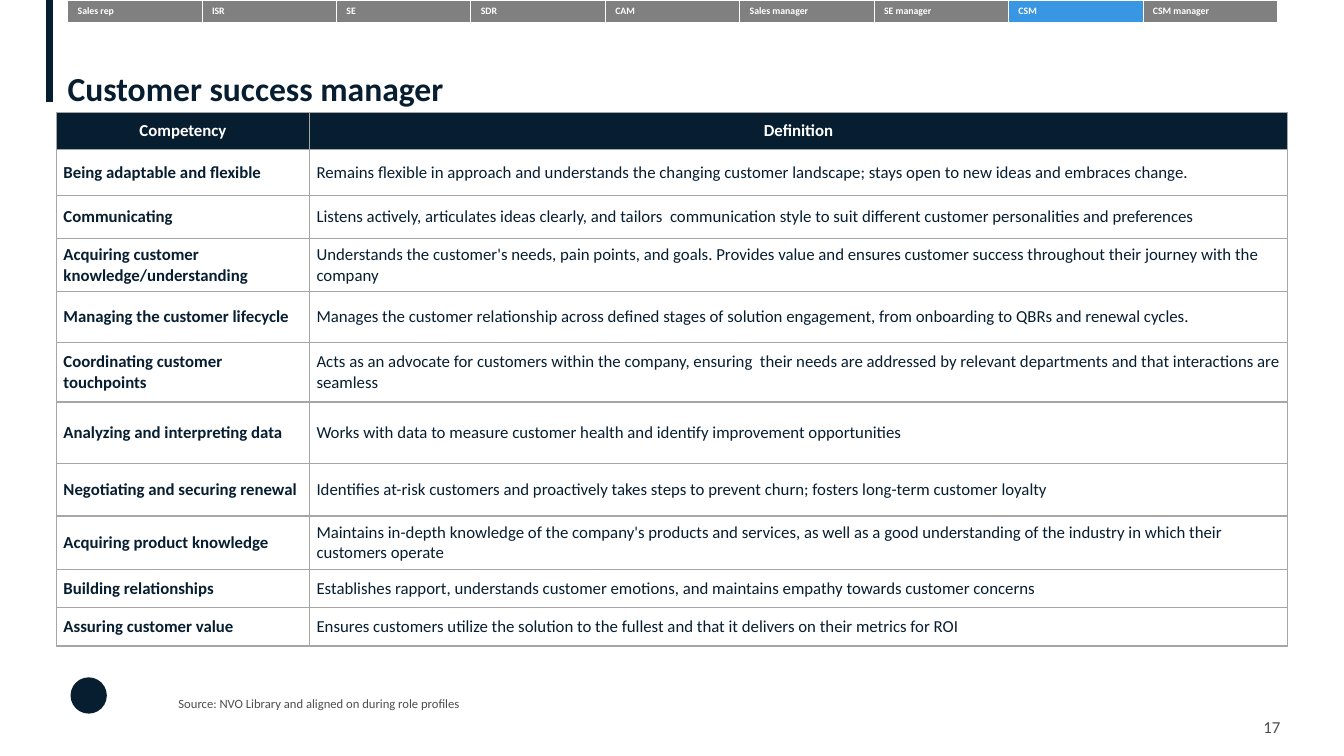
"""Build the customer success manager competency slide."""
from lxml import etree
from pptx import Presentation
from pptx.dml.color import RGBColor
from pptx.enum.shapes import MSO_CONNECTOR, MSO_SHAPE
from pptx.enum.text import MSO_ANCHOR, MSO_AUTO_SIZE, PP_ALIGN
from pptx.oxml.ns import qn
from pptx.util import Inches, Pt

LEFT, CENTER = PP_ALIGN.LEFT, PP_ALIGN.CENTER
TOP, MIDDLE, BOTTOM = MSO_ANCHOR.TOP, MSO_ANCHOR.MIDDLE, MSO_ANCHOR.BOTTOM
STRAIGHT, OVAL = MSO_CONNECTOR.STRAIGHT, MSO_SHAPE.OVAL
NO_FIT = MSO_AUTO_SIZE.NONE

NAVY = RGBColor(0x07, 0x1E, 0x31)
BLUE = RGBColor(0x38, 0x96, 0xE3)
GRAY = RGBColor(0x80, 0x80, 0x80)
RULE = RGBColor(0xA6, 0xA6, 0xA6)
DARK = RGBColor(0x4D, 0x4D, 0x4D)
WHITE = RGBColor(0xFF, 0xFF, 0xFF)

TABS = ["Sales rep", "ISR", "SE", "SDR", "CAM", "Sales manager",
        "SE manager", "CSM", "CSM manager"]
ACTIVE = "CSM"
HEADS = ("Competency", "Definition")
SKILLS = [
    (0.46, "Being adaptable and flexible",
     "Remains flexible in approach and understands the changing customer "
     "landscape; stays open to new ideas and embraces change."),
    (0.43, "Communicating",
     "Listens actively, articulates ideas clearly, and tailors  communication "
     "style to suit different customer personalities and preferences"),
    (0.52, "Acquiring customer knowledge/understanding",
     "Understands the customer's needs, pain points, and goals. Provides value "
     "and ensures customer success throughout their journey with the company"),
    (0.51, "Managing the customer lifecycle",
     "Manages the customer relationship across defined stages of solution "
     "engagement, from onboarding to QBRs and renewal cycles."),
    (0.59, "Coordinating customer touchpoints",
     "Acts as an advocate for customers within the company, ensuring  their "
     "needs are addressed by relevant departments and that interactions are "
     "seamless"),
    (0.61, "Analyzing and interpreting data",
     "Works with data to measure customer health and identify improvement "
     "opportunities"),
    (0.52, "Negotiating and securing renewal",
     "Identifies at-risk customers and proactively takes steps to prevent "
     "churn; fosters long-term customer loyalty"),
    (0.53, "Acquiring product knowledge",
     "Maintains in-depth knowledge of the company's products and services, as "
     "well as a good understanding of the industry in which their "
     "customers operate"),
    (0.38, "Building relationships",
     "Establishes rapport, understands customer emotions, and maintains "
     "empathy towards customer concerns"),
    (0.38, "Assuring customer value",
     "Ensures customers utilize the solution to the fullest and that it "
     "delivers on their metrics for ROI"),
]


def write(frame, text, size=12, color=NAVY, bold=False, align=LEFT, space=1.0):
    """Put formatted text in the first paragraph of a frame."""
    para = frame.paragraphs[0]
    para.text = text
    para.alignment = align
    para.line_spacing = space
    font = para.font
    font.name, font.size, font.bold = "Calibri", Pt(size), bold
    font.color.rgb = color


class Page:
    """Hold the style and the current slide."""

    def __init__(self, deck):
        """Add a title-only slide to the deck."""
        self.slide = deck.slides.add_slide(deck.slide_layouts[5])
        self.shapes = self.slide.shapes

    def frame(self, shape, anchor):
        """Strip the margins of a text shape and anchor its text."""
        frame = shape.text_frame
        frame.margin_left = frame.margin_right = 0
        frame.margin_top = frame.margin_bottom = 0
        frame.auto_size = NO_FIT
        frame.word_wrap = True
        frame.vertical_anchor = anchor
        return frame

    def title(self, text, x, y, w, h):
        """Place and fill the title."""
        shape = self.shapes.title
        shape.left, shape.top = Inches(x), Inches(y)
        shape.width, shape.height = Inches(w), Inches(h)
        write(self.frame(shape, BOTTOM), text, size=24, bold=True, space=0.9)

    def label(self, text, x, y, w, h, anchor=TOP, **style):
        """Add a text box."""
        box = self.shapes.add_textbox(Inches(x), Inches(y), Inches(w), Inches(h))
        write(self.frame(box, anchor), text, **style)

    def line(self, x1, y1, x2, y2, color, width):
        """Add a straight line."""
        line = self.shapes.add_connector(
            STRAIGHT, Inches(x1), Inches(y1), Inches(x2), Inches(y2))
        line.line.color.rgb = color
        line.line.width = Pt(width)
        etree.SubElement(line._element.spPr, qn("a:effectLst"))

    def dot(self, x, y, size, color):
        """Add a plain round mark."""
        dot = self.shapes.add_shape(
            OVAL, Inches(x), Inches(y), Inches(size), Inches(size))
        dot.shadow.inherit = False
        dot.fill.solid()
        dot.fill.fore_color.rgb = color
        dot.line.fill.background()

    def table(self, x, y, cols, rows):
        """Add an unbanded table with the given column and row sizes."""
        table = self.shapes.add_table(
            len(rows), len(cols), Inches(x), Inches(y),
            Inches(sum(cols)), Inches(sum(rows))).table
        table.first_row = table.horz_banding = False
        for col, width in zip(table.columns, cols):
            col.width = Inches(width)
        for row, height in zip(table.rows, rows):
            row.height = Inches(height)
        return table

    def cell(self, cell, text, fill, sides, rule, width, pad, anchor, **style):
        """Fill, border and write one table cell."""
        cell.margin_left, cell.margin_right = Inches(pad[0]), Inches(pad[1])
        cell.margin_top = cell.margin_bottom = Inches(pad[2])
        cell.vertical_anchor = anchor
        props = cell._tc.get_or_add_tcPr()
        for side in sides:
            edge = etree.SubElement(props, qn(f"a:ln{side}"), w=str(Pt(width)))
            solid = etree.SubElement(edge, qn("a:solidFill"))
            etree.SubElement(solid, qn("a:srgbClr"), val=str(rule))
        if fill is None:
            cell.fill.background()
        else:
            cell.fill.solid()
            cell.fill.fore_color.rgb = fill
        write(cell.text_frame, text, **style)


def main():
    """Build and save the deck."""
    deck = Presentation()
    deck.slide_width, deck.slide_height = Inches(13.33), Inches(7.5)
    page = Page(deck)
    page.line(0.49, 0, 0.49, 1.01, NAVY, 5)
    page.dot(0.7, 6.72, 0.36, NAVY)
    page.title("Customer success manager", 0.67, 0.7, 12.41, 0.38)

    grid = page.table(0.56, 1.12, [2.51, 9.7], [0.36] + [s[0] for s in SKILLS])
    for row, texts in enumerate([HEADS] + [s[1:] for s in SKILLS]):
        head = row == 0
        for col, text in enumerate(texts):
            page.cell(
                grid.cell(row, col), text, NAVY if head else None,
                "LRTB", RULE, 1, (0 if head else 0.07, 0, 0), MIDDLE,
                color=WHITE if head else NAVY, bold=head or col == 0,
                align=CENTER if head else LEFT)

    page.label("17", 12.53, 7.11, 0.34, 0.2, anchor=MIDDLE, color=DARK)
    page.label("Source: NVO Library and aligned on during role profiles",
               1.77, 6.9, 6.49, 0.15, size=9, color=DARK)

    strip = page.table(0.67, 0, [12 / len(TABS)] * len(TABS), [0.22])
    for col, text in enumerate(TABS):
        page.cell(strip.cell(0, col), text, BLUE if text == ACTIVE else GRAY,
                  "LR", WHITE, 0.5, (0.1, 0.1, 0.05), TOP,
                  size=7, color=WHITE, bold=True)
    deck.save("out.pptx")


if __name__ == "__main__":
    main()
